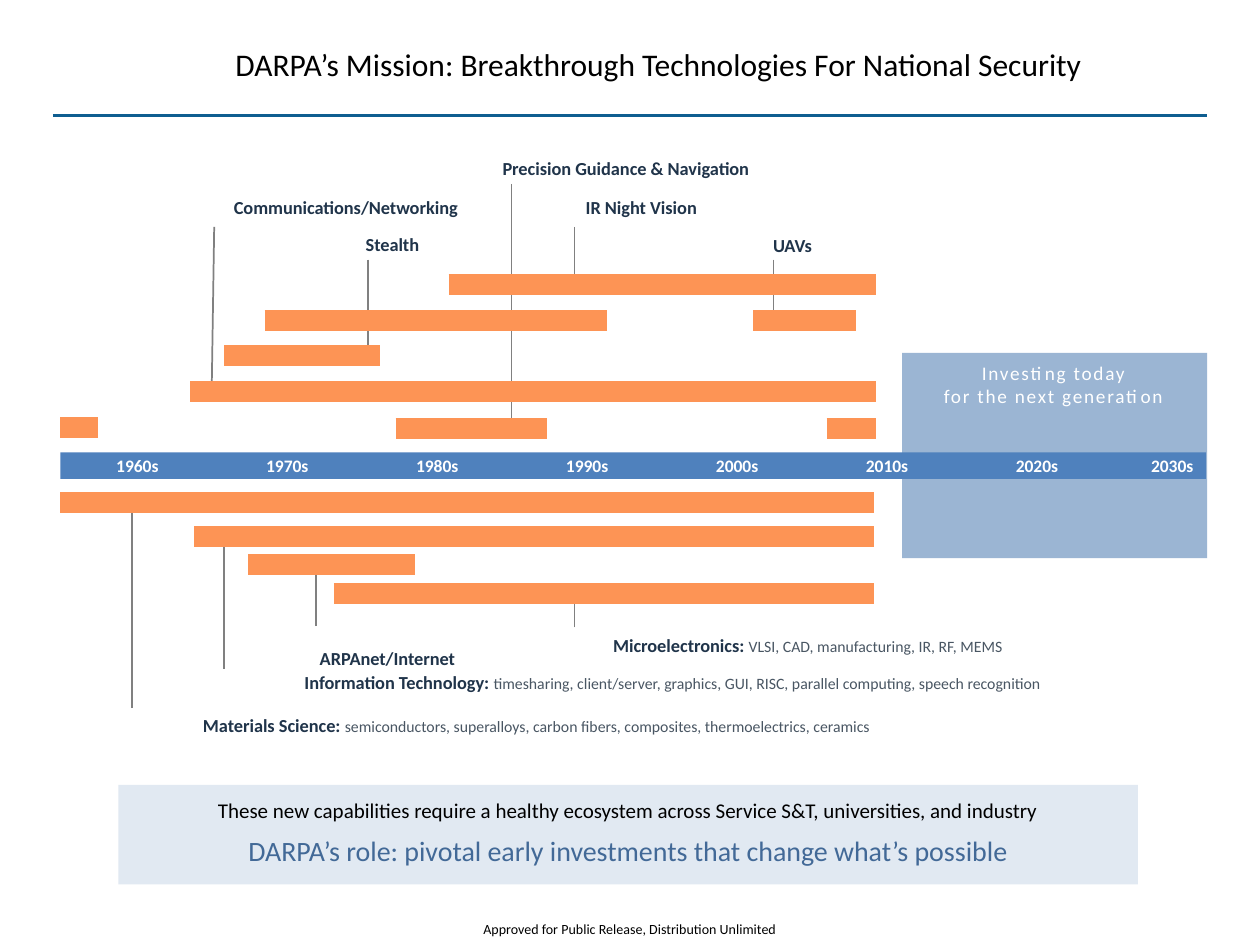
from dataclasses import dataclass

from lxml.etree import SubElement
from pptx import Presentation
from pptx.dml.color import RGBColor
from pptx.enum.shapes import MSO_CONNECTOR as Connector, MSO_SHAPE as Preset
from pptx.enum.text import MSO_ANCHOR as Anchor, PP_ALIGN as Align
from pptx.oxml.ns import qn
from pptx.util import Inches, Pt


@dataclass(frozen=True)
class Theme:
    font: str = "Calibri"
    black: str = "000000"
    white: str = "FFFFFF"
    rule: str = "0F5E90"
    panel: str = "9BB5D3"
    axis: str = "4F81BD"
    bar: str = "FD9455"
    stem: str = "808080"
    label: str = "20344A"
    detail: str = "495663"
    banner: str = "E1E9F2"
    role: str = "426997"
    title_size: float = 18
    role_size: float = 16
    banner_size: float = 12
    panel_size: float = 11
    label_size: float = 10.5
    year_size: float = 10
    detail_size: float = 9
    footer_size: float = 8


class TimelineSlide:
    def __init__(self, page, theme):
        self.page = page
        self.theme = theme

    def line(self, start, end, color, width):
        connector = self.page.shapes.add_connector(
            Connector.STRAIGHT, *map(Inches, start + end))
        connector.line.color.rgb = RGBColor.from_string(color)
        connector.line.width = Pt(width)
        SubElement(connector._element.spPr, qn("a:effectLst"))

    def rectangle(self, place, color):
        shape = self.page.shapes.add_shape(Preset.RECTANGLE, *map(Inches, place))
        shape.shadow.inherit = False
        shape.fill.solid()
        shape.fill.fore_color.rgb = RGBColor.from_string(color)
        shape.line.fill.background()
        return shape

    def style(self, span, size, color, bold=False, spacing=0):
        span.font.name = self.theme.font
        span.font.size = Pt(size)
        span.font.bold = bold
        span.font.color.rgb = RGBColor.from_string(color)
        if spacing:
            span._r.get_or_add_rPr().set("spc", str(spacing * 100))

    def text(self, place, words, size, color, align=Align.CENTER,
             anchor=Anchor.TOP, wrap=True, bold=False, spacing=0):
        box = self.page.shapes.add_textbox(*map(Inches, place))
        frame = box.text_frame
        frame.word_wrap = wrap
        frame.vertical_anchor = anchor
        frame.text = words
        for para in frame.paragraphs:
            para.alignment = align
            for span in para.runs:
                self.style(span, size, color, bold, spacing)
        return box

    def label(self, left, top, width, words, detail="", align=Align.CENTER):
        theme = self.theme
        box = self.text((left, top, width, 0.28), words, theme.label_size,
                        theme.label, align, wrap=False, bold=True)
        if detail:
            span = box.text_frame.paragraphs[0].add_run()
            span.text = detail
            self.style(span, theme.detail_size, theme.detail)

    def year(self, left, width, words, align=Align.CENTER):
        self.text((left, 3.59, width, 0.21), words, self.theme.year_size,
                  self.theme.white, align, Anchor.MIDDLE, bold=True)

    def banner(self, place, lines):
        frame = self.rectangle(place, self.theme.banner).text_frame
        frame.word_wrap = True
        frame.vertical_anchor = Anchor.TOP
        frame.margin_left = frame.margin_right = Inches(0.2)
        frame.margin_top = frame.margin_bottom = Inches(0.1)
        frame.text = "\n".join(words for words, _, _ in lines)
        for index, (para, (_, size, color)) in enumerate(zip(frame.paragraphs, lines)):
            para.alignment = Align.CENTER
            para.space_before = Pt(6 if index else 0)
            self.style(para.runs[0], size, color)


# Each stem: start point, end point
STEMS = [
    ((4.56, 1.8), (4.56, 2.25)), ((2.92, 2.06), (2.92, 2.78)),
    ((4.06, 1.46), (4.06, 3.4)), ((6.14, 2.06), (6.14, 2.48)),
    ((1.7, 1.8), (1.68, 3.11)), ((1.05, 5.62), (1.05, 4.05)),
    ((2.51, 4.97), (2.51, 4.49)), ((4.56, 4.98), (4.56, 4.71)),
    ((1.78, 4.26), (1.78, 5.31)),
]

# Each bar: left end, right end, height on the page
BARS = [
    (3.56, 6.95, 2.26), (2.1, 4.82, 2.54), (5.98, 6.79, 2.54),
    (1.78, 3.02, 2.82), (1.51, 6.95, 3.11), (0.48, 0.78, 3.39),
    (3.14, 4.34, 3.4), (6.56, 6.95, 3.4), (0.48, 6.94, 3.99),
    (1.54, 6.94, 4.26), (1.97, 3.29, 4.48), (2.65, 6.94, 4.71),
]

# Each label: left, top, width, name, detail
LABELS = [
    (1.74, 1.51, 2.01, "Communications/Networking", ""),
    (2.8, 1.8, 0.63, "Stealth", ""),
    (4.54, 1.51, 1.1, "IR Night Vision", ""),
    (6.02, 1.81, 0.54, "UAVs", ""),
    (2.42, 5.09, 1.31, "ARPAnet/Internet", ""),
    (4.74, 4.98, 3.34, "Microelectronics: ",
     "VLSI, CAD, manufacturing, IR, RF, MEMS"),
    (2.26, 5.28, 6.15, "Information Technology: ",
     "timesharing, client/server, graphics, GUI, RISC, parallel computing, "
     "speech recognition"),
    (1.47, 5.62, 5.57, "Materials Science: ",
     "semiconductors, superalloys, carbon fibers, composites, thermoelectrics, "
     "ceramics"),
]


def main():
    deck = Presentation()
    deck.slide_width, deck.slide_height = Inches(10), Inches(7.5)
    theme = Theme()
    slide = TimelineSlide(deck.slides.add_slide(deck.slide_layouts[6]), theme)

    # Title and rule
    slide.line((0.42, 0.92), (9.58, 0.92), theme.rule, 1.75)
    slide.text((1.77, 0.17, 7.81, 0.67),
               "DARPA’s Mission: Breakthrough Technologies For National Security",
               theme.title_size, theme.black, Align.LEFT, Anchor.MIDDLE)

    # Panel for the future and time axis
    slide.rectangle((7.16, 2.8, 2.42, 1.63), theme.panel)
    slide.rectangle((0.48, 3.59, 9.09, 0.21), theme.axis)
    slide.text((7.37, 2.82, 1.98, 0.47), "Investing today\nfor the next generation",
               theme.panel_size, theme.white, wrap=False, spacing=1)
    for index in range(7):
        slide.year(0.49 + 1.19 * index, 1.2, f"{1960 + 10 * index}s")
    slide.year(8.81, 0.76, "2030s", Align.RIGHT)

    # Stems behind the programme bars
    for start, end in STEMS:
        slide.line(start, end, theme.stem, 1)
    for left, right, height in BARS:
        slide.line((left, height), (right, height), theme.bar, 12)

    # Programme labels
    slide.label(3.89, 1.2, 2.2, "Precision Guidance & Navigation", align=Align.LEFT)
    for label in LABELS:
        slide.label(*label)

    # Closing banner and footer
    slide.banner((0.94, 6.23, 8.09, 0.79), [
        ("These new capabilities require a healthy ecosystem across Service S&T, "
         "universities, and industry", theme.banner_size, theme.black),
        ("DARPA’s role: pivotal early investments that change what’s possible",
         theme.role_size, theme.role),
    ])
    slide.text((1.46, 7.16, 7.08, 0.33),
               "Approved for Public Release, Distribution Unlimited",
               theme.footer_size, theme.black, anchor=Anchor.BOTTOM)

    deck.save("out.pptx")


if __name__ == "__main__":
    main()
